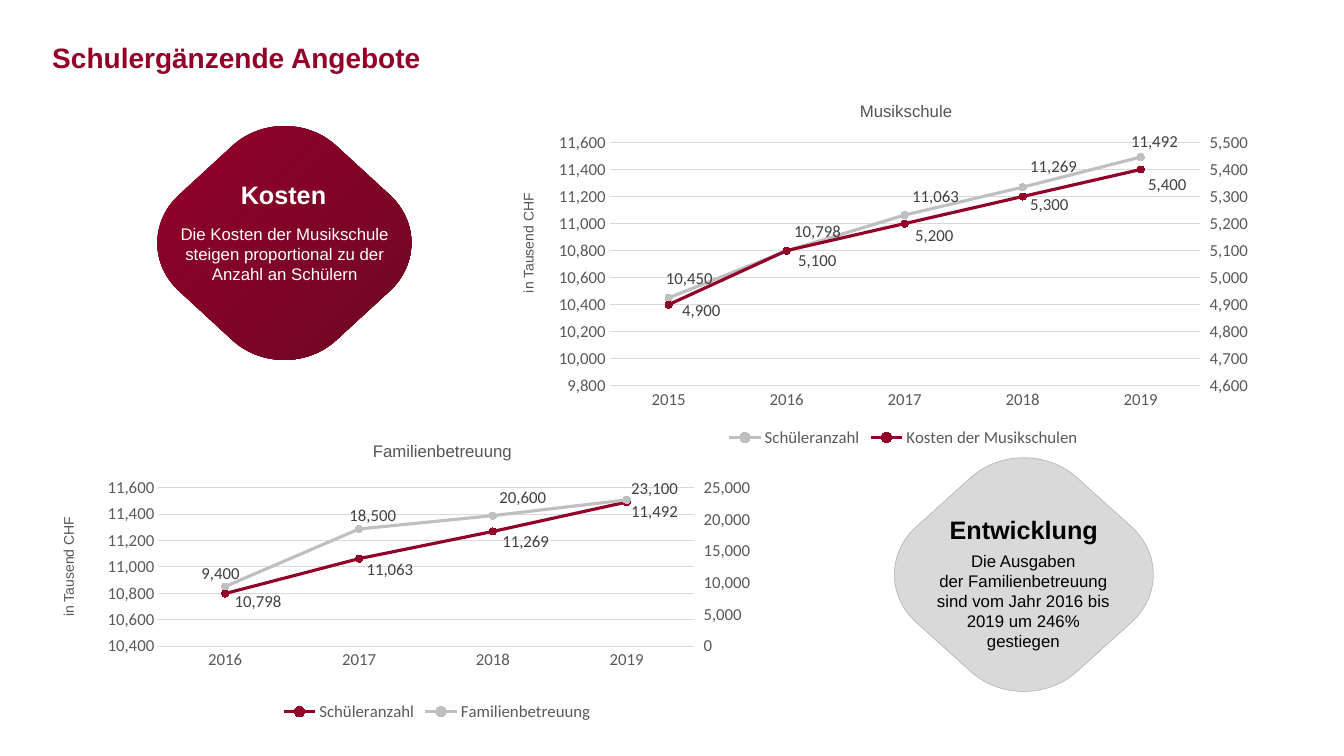
"""Build the slide on complementary school services with two dual-axis line charts."""
from copy import deepcopy
from dataclasses import dataclass

from lxml import etree
from pptx import Presentation
from pptx import util as u
from pptx.chart import axis as ax
from pptx.chart import data as cd
from pptx.dml import color as dc
from pptx.enum import chart as ec
from pptx.enum import text as et
from pptx.oxml import ns

RED, SILVER, GREY, AXIS, RULE = "920028", "BFBFBF", "545554", "595959", "D9D9D9"
WHITE, BLACK, LABEL = "FFFFFF", "000000", "404040"
NBSP = chr(160)
Box = tuple[float, float, float, float]


@dataclass
class Caption:
    text: str
    box: Box
    size: int
    color: str
    bold: bool = False
    centred: bool = False
    rotation: int = 0


@dataclass
class Diamond:
    box: Box
    fills: tuple[str, ...]
    outline: str = ""


@dataclass
class Line:
    name: str
    values: tuple[int, ...]
    color: str
    scale: tuple[int, int, int]
    offsets: tuple[tuple[float, float], ...]


@dataclass
class LineChart:
    box: Box
    years: range
    lines: tuple[Line, Line]
    plot: Box | None = None


CAPTIONS = (
    Caption("Schulergänzende Angebote", (0.42, 0.35, 5.07, 0.44), 20, RED, bold=True),
    Caption("Musikschule", (8.43, 0.95, 3, 0.3), 12, GREY),
    Caption("Familienbetreuung", (3.6, 4.32, 3, 0.3), 12, GREY),
    Caption(f"Die Kosten der Musikschule steigen proportional zu der Anzahl an{NBSP}Schülern",
            (1.56, 2.17, 2.53, 0.71), 12, WHITE, centred=True),
    Caption(f"Die Ausgaben der{NBSP}Familienbetreuung sind vom Jahr 2016 bis 2019 um 246% gestiegen",
            (9.16, 5.41, 1.98, 1.11), 12, BLACK, centred=True),
    Caption("in Tausend CHF", (3.74, 1.37, 3, 0.27), 10, GREY, rotation=270),
    Caption("in Tausend CHF", (-0.82, 4.58, 3, 0.27), 10, GREY, rotation=270),
    Caption("Entwicklung", (9.32, 5.05, 3, 0.4), 18, BLACK, bold=True),
    Caption("Kosten", (2.29, 1.73, 3, 0.4), 18, WHITE, bold=True),
)
DIAMONDS = (
    Diamond((8.87, 4.54, 2.57, 2.32), (RULE,), BLACK),
    Diamond((1.56, 1.25, 2.52, 2.32), ("910029", "6F0722")),
)
CHARTS = (
    LineChart((0.82, 4.34, 7.03, 2.86), range(2016, 2020), (
        Line("Schüleranzahl", (10798, 11063, 11269, 11492), RED, (10400, 11600, 200),
             ((0.02, 0.08), (0, 0.11), (0.02, 0.1), (-0.03, 0.1))),
        Line("Familienbetreuung", (9400, 18500, 20600, 23100), SILVER, (0, 25000, 5000),
             ((-0.31, -0.13), (-0.17, -0.13), (-0.01, -0.18), (-0.03, -0.11)))),
        plot=(0.75, 0.5, 5.31, 1.57)),
    LineChart((5.4, 1.25, 7.12, 3.23), range(2015, 2020), (
        Line("Schüleranzahl", (10450, 10798, 11063, 11269, 11492), SILVER, (9800, 11600, 200),
             ((-0.1, -0.19), (0, -0.19), (0, -0.18), (0, -0.2), (-0.17, -0.15))),
        Line("Kosten der Musikschulen", (4900, 5100, 5200, 5300, 5400), RED, (4600, 5500, 100),
             ((0.06, 0.06), (0.04, 0.1), (0.03, 0.12), (0, 0.08), (0, 0.15))))),
)


def rgb(value: str) -> dc.RGBColor:
    """Turn a hex string into a colour."""
    return dc.RGBColor.from_string(value)


def set_font(font, name: str, size: int, color: str, bold: bool = False) -> None:
    """Set the usual properties of a font."""
    font.name, font.size, font.bold = name, u.Pt(size), bold
    font.color.rgb = rgb(color)


def set_line(line, color: str, width: float) -> None:
    """Set the colour and width of a line."""
    line.color.rgb = rgb(color)
    line.width = u.Pt(width)


def add_caption(s, item: Caption) -> None:
    """Add one text box."""
    sp = s.shapes.add_textbox(*map(u.Inches, item.box))
    sp.rotation = item.rotation
    tf = sp.text_frame
    tf.word_wrap = True
    tf.auto_size = et.MSO_AUTO_SIZE.SHAPE_TO_FIT_TEXT
    tf.text = item.text
    p = tf.paragraphs[0]
    p.alignment = et.PP_ALIGN.CENTER if item.centred else et.PP_ALIGN.LEFT
    set_font(p.runs[0].font, "Arial", item.size, item.color, item.bold)


def round_corners(sp) -> None:
    """Replace the outline of a diamond by four Bézier corners joined by lines."""
    outline = sp._element.find(".//" + ns.qn("a:path"))
    for child in list(outline):
        outline.remove(child)
    corner = ((0.835, -0.405), (1.055, -0.18), (1.055, 0.18), (0.835, 0.405))
    for turn in range(4):
        start = "a:lnTo" if turn else "a:moveTo"
        for tag, points in ((start, corner[:1]), ("a:cubicBezTo", corner[1:])):
            step = etree.SubElement(outline, ns.qn(tag))
            for x, y in points:
                etree.SubElement(step, ns.qn("a:pt"), x=str(round(sp.width * (1 + x) / 2)),
                                 y=str(round(sp.height * (1 + y) / 2)))
        corner = tuple((-y, x) for x, y in corner)
    etree.SubElement(outline, ns.qn("a:close"))


def add_diamond(s, item: Diamond) -> None:
    """Add a diamond with rounded corners."""
    left, top, width, height = map(u.Inches, item.box)
    tips = [(left + width, top + height // 2), (left + width // 2, top + height),
            (left, top + height // 2), (left + width // 2, top)]
    builder = s.shapes.build_freeform(*tips[0])
    builder.add_line_segments(tips[1:], close=True)
    sp = builder.convert_to_shape()
    round_corners(sp)
    sp.shadow.inherit = False
    if len(item.fills) > 1:
        sp.fill.gradient()
        sp.fill.gradient_angle = 315
        for stop, color in zip(sp.fill.gradient_stops, item.fills):
            stop.color.rgb = rgb(color)
    else:
        sp.fill.solid()
        sp.fill.fore_color.rgb = rgb(item.fills[0])
    if item.outline:
        set_line(sp.line, item.outline, 0.5)
        color = sp._element.find(".//" + ns.qn("a:ln")).find(".//" + ns.qn("a:srgbClr"))
        etree.SubElement(color, ns.qn("a:alpha"), val="20000")
    else:
        sp.line.fill.background()


def manual_layout(**values) -> etree._Element:
    """Make a chart layout element from its parts in order."""
    layout = etree.Element(ns.qn("c:layout"))
    manual = etree.SubElement(layout, ns.qn("c:manualLayout"))
    for tag, value in values.items():
        etree.SubElement(manual, ns.qn("c:" + tag), val=str(value))
    return layout


def set_scale(axis, scale: tuple[int, int, int]) -> None:
    """Set the minimum, maximum and step of an axis."""
    axis.minimum_scale, axis.maximum_scale, axis.major_unit = scale


def hide_leaders(labels) -> None:
    """Switch off the lines between points and their labels."""
    for old in labels.findall(ns.qn("c:showLeaderLines")):
        labels.remove(old)
    uri = "http://schemas.microsoft.com/office/drawing/2012/chart"
    etree.SubElement(labels, ns.qn("c:showLeaderLines"), val="0")
    ext = etree.SubElement(etree.SubElement(labels, ns.qn("c:extLst")), ns.qn("c:ext"),
                           uri="{CE6537A1-D6FC-4f65-9D91-7224C49458BB}")
    etree.SubElement(ext, "{%s}showLeaderLines" % uri, nsmap={"c15": uri}, val="0")


def style_series(series, line: Line, box: Box) -> None:
    """Format one series and place its labels."""
    series.smooth = False
    set_line(series.format.line, line.color, 2.25)
    marker = series.marker
    marker.style, marker.size = ec.XL_MARKER_STYLE.CIRCLE, 5
    marker.format.fill.solid()
    marker.format.fill.fore_color.rgb = rgb(line.color)
    set_line(marker.format.line, line.color, 0.75)
    series.data_labels.show_value = True
    set_font(series.data_labels.font, "Calibri", 12, LABEL)
    for i in range(len(line.offsets)):
        label = series.points[i].data_label
        set_font(label.font, "Calibri", 12, LABEL)
        label.position = ec.XL_LABEL_POSITION.RIGHT
    labels = series._element.find(ns.qn("c:dLbls"))
    for label, (dx, dy) in zip(labels.findall(ns.qn("c:dLbl")), line.offsets):
        label.insert(1, manual_layout(x=dx / box[2], y=dy / box[3]))
    hide_leaders(labels)


def add_right_axis(chart, area, line: Line) -> None:
    """Move the second series to its own value axis on the right."""
    left = area.find(ns.qn("c:lineChart"))
    right = deepcopy(left)
    left.remove(left.findall(ns.qn("c:ser"))[1])
    right.remove(right.find(ns.qn("c:ser")))
    left.addnext(right)
    cat, val = (area.find(ns.qn(tag)) for tag in ("c:catAx", "c:valAx"))
    new_cat, new_val = deepcopy(cat), deepcopy(val)
    val.addnext(new_val)
    new_val.addnext(new_cat)
    ids = ("50010", "50020")
    for el, value in zip(right.findall(ns.qn("c:axId")), ids):
        el.set("val", value)
    for el, own, other in ((new_cat, *ids), (new_val, *reversed(ids))):
        el.find(ns.qn("c:axId")).set("val", own)
        el.find(ns.qn("c:crossAx")).set("val", other)
    ax.CategoryAxis(new_cat).visible = False
    new_val.find(ns.qn("c:axPos")).set("val", "r")
    new_val.find(ns.qn("c:crosses")).set("val", "max")
    axis = ax.ValueAxis(new_val)
    axis.has_major_gridlines = False
    axis.major_tick_mark = ec.XL_TICK_MARK.OUTSIDE
    set_scale(axis, line.scale)


def add_line_chart(s, item: LineChart) -> None:
    """Add a line chart with a left and a right value axis."""
    data = cd.CategoryChartData(number_format="#,##0")
    data.categories = [str(year) for year in item.years]
    for line in item.lines:
        data.add_series(line.name, line.values)
    chart = s.shapes.add_chart(ec.XL_CHART_TYPE.LINE_MARKERS, *map(u.Inches, item.box), data).chart
    set_font(chart.font, "Calibri", 10, BLACK)
    chart.has_title = False
    chart.has_legend = True
    chart.legend.position = ec.XL_LEGEND_POSITION.BOTTOM
    chart.legend.include_in_layout = False
    set_font(chart.legend.font, "Calibri", 12, AXIS)
    for axis in (chart.category_axis, chart.value_axis):
        set_font(axis.tick_labels.font, "Calibri", 12, AXIS)
        axis.major_tick_mark = axis.minor_tick_mark = ec.XL_TICK_MARK.NONE
    set_line(chart.category_axis.format.line, RULE, 0.75)
    axis = chart.value_axis
    axis.format.line.fill.background()
    set_line(axis.major_gridlines.format.line, RULE, 0.75)
    axis.tick_labels.number_format = "#,##0"
    axis.tick_labels.number_format_is_linked = False
    set_scale(axis, item.lines[0].scale)
    for series, line in zip(chart.plots[0].series, item.lines):
        style_series(series, line, item.box)
    area = chart.element.find(".//" + ns.qn("c:plotArea"))
    add_right_axis(chart, area, item.lines[1])
    if item.plot:
        for old in area.findall(ns.qn("c:layout")):
            area.remove(old)
        x, y, w, h = (part / item.box[2 + i % 2] for i, part in enumerate(item.plot))
        area.insert(0, manual_layout(layoutTarget="inner", xMode="edge", yMode="edge",
                                     x=x, y=y, w=w, h=h))


def main() -> None:
    """Draw the slide and save it."""
    prs = Presentation()
    prs.slide_width, prs.slide_height = u.Inches(13.33), u.Inches(7.5)
    s = prs.slides.add_slide(prs.slide_layouts[6])
    for draw, items in ((add_diamond, DIAMONDS), (add_caption, CAPTIONS), (add_line_chart, CHARTS)):
        for item in items:
            draw(s, item)
    prs.save("out.pptx")


if __name__ == "__main__":
    main()
